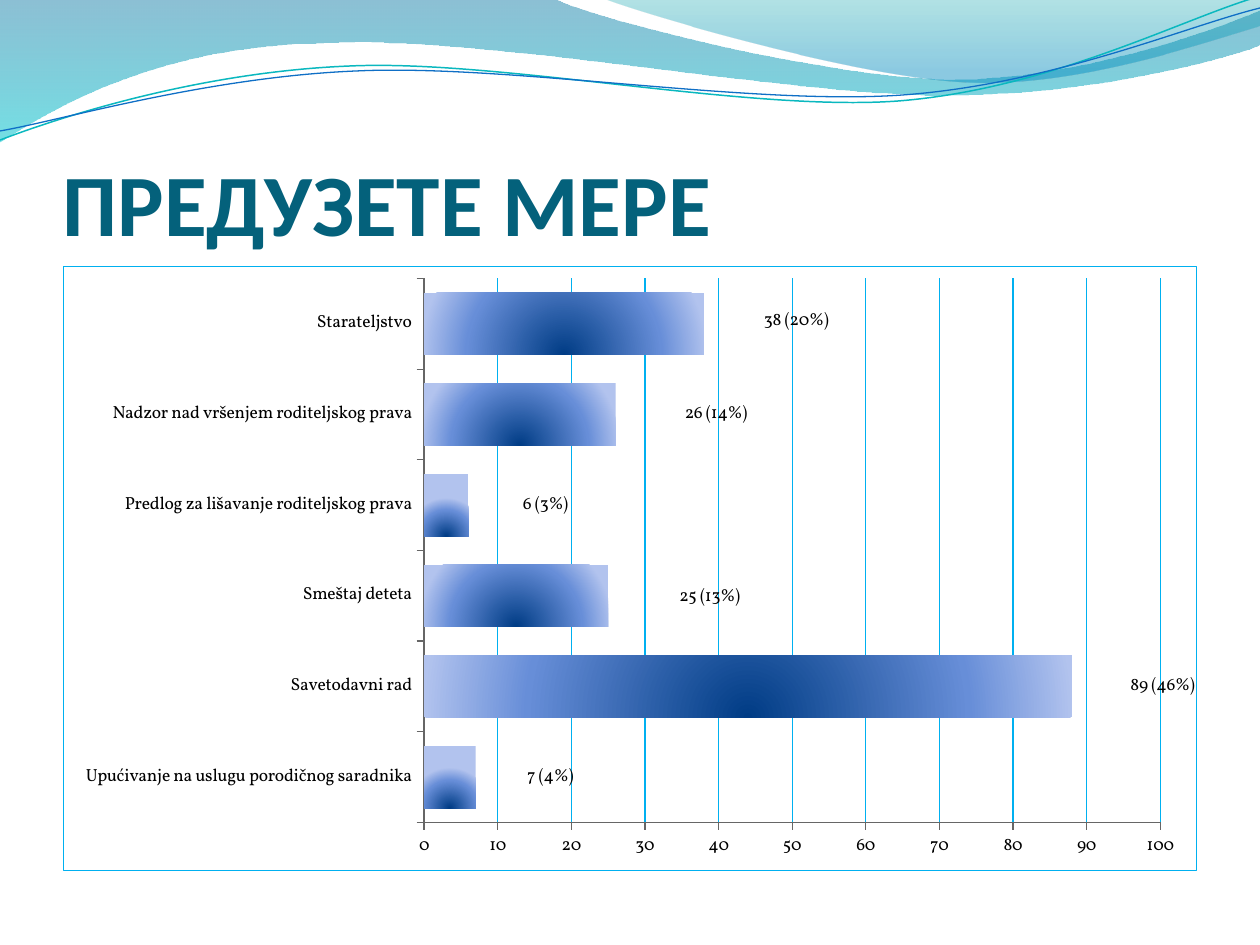
"""Build a slide with a wave header, a title and a bar chart of measures taken."""
import lxml.etree
import pptx
import pptx.chart.data
import pptx.dml.color
import pptx.enum.chart
import pptx.enum.text
import pptx.oxml
import pptx.oxml.ns
import pptx.util

PX = 914400 // 126
NAMESPACES = pptx.oxml.ns.nsdecls("a", "c")
qn = pptx.oxml.ns.qn


def color(hex_string):
    return pptx.dml.color.RGBColor.from_string(hex_string)


def draw_path(shapes, start, segments, closed):
    points = [start]
    for segment in segments:
        points.extend(zip(segment[0::2], segment[1::2]))
    builder = shapes.build_freeform(*points[0], scale=PX)
    builder.add_line_segments(points[1:], close=closed)
    shape = builder.convert_to_shape()
    shape.shadow.inherit = False
    lines = iter(list(shape.element.iter(qn("a:lnTo"))))
    for segment in segments:
        first = next(lines)
        if len(segment) == 6:
            first.tag = qn("a:cubicBezTo")
            for line in (next(lines), next(lines)):
                first.append(line[0])
                line.getparent().remove(line)
    return shape


presentation = pptx.Presentation()
presentation.slide_width = pptx.util.Inches(10)
presentation.slide_height = pptx.util.Inches(7.5)
slide = presentation.slides.add_slide(presentation.slide_layouts[6])

waves = [
    ((0, 0), [(554, -1), (600, 21, 837, 79, 955, 79), (1075, 79, 1207, 33, 1260, 11),
              (1261, 45), (1238, 55, 1096, 96, 940, 95), (784, 95, 481, 35, 324, 43),
              (163, 45, 58, 105, -1, 142), (0, 0)],
     [(0, "0074A1", 45), (1, "00C6CF", 55)]),
    ((604, -1), [(641, 14, 859, 78, 969, 82), (1079, 87, 1211, 40, 1260, 26),
                 (1260, 0), (604, -1)],
     [(0, "00A1A9", 30), (0.8, "008BBF", 45)]),
]
for start, segments, stops in waves:
    wave = draw_path(slide.shapes, start, segments, True)
    wave.line.fill.background()
    wave.fill.gradient()
    wave.fill.gradient_angle = 270
    for stop, (position, hex_string, opacity) in zip(wave.fill.gradient_stops, stops):
        stop.position = position
        stop.color.rgb = color(hex_string)
    gradient_colors = wave.element.spPr.iter(qn("a:srgbClr"))
    for element, (position, hex_string, opacity) in zip(list(gradient_colors), stops):
        lxml.etree.SubElement(element, qn("a:alpha")).set("val", str(opacity * 1000))

curves = [
    ((0, 140), [(60, 117, 199, 72, 349, 66), (498, 59, 747, 112, 898, 101),
                (1050, 89, 1182, 19, 1257, -3)], "0AB8BF", 0.85),
    ((0, 131), [(59, 121, 207, 77, 357, 71), (508, 64, 752, 106, 903, 95),
                (1053, 84, 1187, 26, 1260, 8)], "0F6FC6", 0.75),
]
for start, segments, hex_string, width in curves:
    curve = draw_path(slide.shapes, start, segments, False)
    curve.fill.background()
    curve.line.color.rgb = color(hex_string)
    curve.line.width = pptx.util.Pt(width)

title = slide.shapes.add_textbox(63 * PX, 97 * PX, 1134 * PX, 157 * PX)
text_frame = title.text_frame
text_frame.word_wrap = True
text_frame.vertical_anchor = pptx.enum.text.MSO_ANCHOR.BOTTOM
text_frame.margin_left = text_frame.margin_right = text_frame.margin_bottom = 0
text_frame.margin_top = 6 * PX
text_frame.text = "ПРЕДУЗЕТЕ МЕРЕ"
title_font = text_frame.paragraphs[0].runs[0].font
title_font.name = "Calibri"
title_font.size = pptx.util.Pt(50)
title_font.bold = True
title_font.color.rgb = color("04617B")

measures = [
    ("Upućivanje na uslugu porodičnog saradnika", 7, "7 (4%)", 103, 0),
    ("Savetodavni rad", 88, "89 (46%)", 128, 0),
    ("Smeštaj deteta", 25, "25 (13%)", 137, 2),
    ("Predlog za lišavanje roditeljskog prava", 6, "6 (3%)", 105, 0),
    ("Nadzor nad vršenjem roditeljskog prava", 26, "26 (14%)", 137, 0),
    ("Starateljstvo", 38, "38 (20%)", 130, -2),
]
chart_data = pptx.chart.data.CategoryChartData()
chart_data.categories = [measure[0] for measure in measures]
chart_data.add_series("Series 1", [measure[1] for measure in measures])
chart = slide.shapes.add_chart(
    pptx.enum.chart.XL_CHART_TYPE.BAR_STACKED,
    63 * PX, 266 * PX, 1134 * PX, 605 * PX, chart_data).chart
chart.has_legend = False
chart.has_title = False
chart.font.name = "Vollkorn"
chart.font.size = pptx.util.Pt(10)
chart.font.color.rgb = color("000000")

plot = chart.plots[0]
plot.gap_width = 46
plot.overlap = 100
plot.vary_by_categories = False

for axis in (chart.category_axis, chart.value_axis):
    axis.major_tick_mark = pptx.enum.chart.XL_TICK_MARK.OUTSIDE
    axis.format.line.color.rgb = color("666666")
    axis.format.line.width = pptx.util.Pt(0.75)
chart.category_axis.has_major_gridlines = False
value_axis = chart.value_axis
value_axis.minimum_scale = 0
value_axis.maximum_scale = 100
value_axis.major_unit = 10
value_axis.has_major_gridlines = True
value_axis.major_gridlines.format.line.color.rgb = color("00B0F0")
value_axis.major_gridlines.format.line.width = pptx.util.Pt(0.75)

series = plot.series[0]
series.format.fill.solid()
series.format.fill.fore_color.rgb = color("0F6FC6")
solid_fill = chart.element.find(".//" + qn("c:ser") + "/" + qn("c:spPr") + "/" + qn("a:solidFill"))
solid_fill.getparent().replace(solid_fill, pptx.oxml.parse_xml(
    f'<a:gradFill {NAMESPACES} rotWithShape="1"><a:gsLst>'
    '<a:gs pos="0"><a:srgbClr val="003C85"/></a:gs>'
    '<a:gs pos="68000"><a:srgbClr val="678ED8"/></a:gs>'
    '<a:gs pos="100000"><a:srgbClr val="B2C3EE"/></a:gs></a:gsLst>'
    '<a:path path="circle"><a:fillToRect l="50000" t="100000" r="50000"/></a:path>'
    '</a:gradFill>'))

series.data_labels.show_value = True
series.data_labels.position = pptx.enum.chart.XL_LABEL_POSITION.INSIDE_END
for index, (category, value, label_text, shift, drop) in enumerate(measures):
    label = series.points[index].data_label
    label.text_frame.text = label_text
    label.position = pptx.enum.chart.XL_LABEL_POSITION.INSIDE_END
    label_font = label.text_frame.paragraphs[0].runs[0].font
    label_font.name = "Vollkorn"
    label_font.size = pptx.util.Pt(10)
    label_font.color.rgb = color("000000")
    chart.element.findall(".//" + qn("c:dLbl"))[index].insert(1, pptx.oxml.parse_xml(
        f'<c:layout {NAMESPACES}><c:manualLayout><c:x val="{shift / 1134}"/>'
        f'<c:y val="{drop / 605}"/></c:manualLayout></c:layout>'))

labels = chart.element.find(".//" + qn("c:ser") + "/" + qn("c:dLbls"))
for leader_lines in labels.findall(qn("c:showLeaderLines")):
    leader_lines.set("val", "0")
labels.append(pptx.oxml.parse_xml(
    f'<c:extLst {NAMESPACES}><c:ext uri="{{CE6537A1-D6FC-4f65-9D91-7224C49458BB}}" '
    'xmlns:c15="http://schemas.microsoft.com/office/drawing/2012/chart">'
    '<c15:showLeaderLines val="0"/></c:ext></c:extLst>'))

plot_area = chart.element.find(".//" + qn("c:plotArea"))
for layout in plot_area.findall(qn("c:layout")):
    plot_area.remove(layout)
plot_area.insert(0, pptx.oxml.parse_xml(
    f'<c:layout {NAMESPACES}><c:manualLayout><c:layoutTarget val="inner"/>'
    '<c:xMode val="edge"/><c:yMode val="edge"/>'
    f'<c:x val="{361 / 1134}"/><c:y val="{12 / 605}"/>'
    f'<c:w val="{737 / 1134}"/><c:h val="{545 / 605}"/></c:manualLayout></c:layout>'))
chart.element.find(qn("c:chart")).addnext(pptx.oxml.parse_xml(
    f'<c:spPr {NAMESPACES}><a:noFill/><a:ln w="9525"><a:solidFill>'
    '<a:srgbClr val="00B0F0"/></a:solidFill></a:ln></c:spPr>'))

presentation.save("out.pptx")
